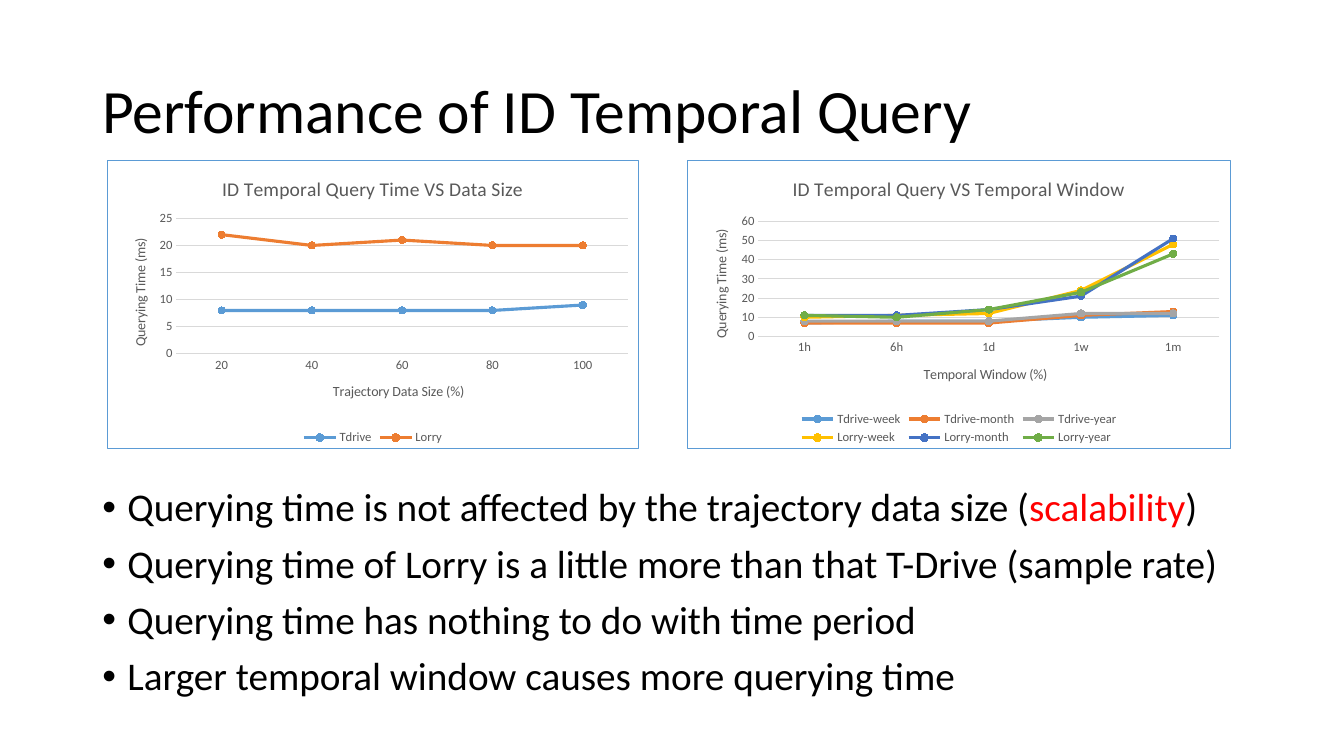
from dataclasses import dataclass

from lxml import etree
from pptx import Presentation
from pptx.chart.data import CategoryChartData
from pptx.dml.color import RGBColor
from pptx.enum.chart import XL_CHART_TYPE, XL_LEGEND_POSITION, XL_MARKER_STYLE, XL_TICK_MARK
from pptx.enum.text import MSO_ANCHOR
from pptx.oxml import parse_xml
from pptx.oxml.ns import nsdecls, qn
from pptx.util import Pt

LINE, STACKED = XL_CHART_TYPE.LINE_MARKERS, XL_CHART_TYPE.LINE_MARKERS_STACKED
BOTTOM, CIRCLE = XL_LEGEND_POSITION.BOTTOM, XL_MARKER_STYLE.CIRCLE
NO_TICK, MIDDLE = XL_TICK_MARK.NONE, MSO_ANCHOR.MIDDLE


@dataclass(frozen=True)
class Theme:
    """Colours, font and type sizes of the slide."""
    font: str = "Calibri"
    ink: str = "000000"
    accent: str = "FF0000"
    muted: str = "595959"
    grid: str = "D9D9D9"
    border: str = "5B9BD5"
    series: tuple = ("5B9BD5", "ED7D31", "A5A5A5", "FFC000", "4472C4", "70AD47")
    heading: float = 44
    body: float = 28
    chart_title: float = 14
    axis_title: float = 10
    label: float = 9


THEME = Theme()

HEADING = "Performance of ID Temporal Query"
FINDINGS = [
    [("Querying time is not affected by the trajectory data size (", THEME.ink),
     ("scalability", THEME.accent), (")", THEME.ink)],
    [("Querying time of Lorry is a little more than that T-Drive (sample rate)", THEME.ink)],
    [("Querying time has nothing to do with time period", THEME.ink)],
    [("Larger temporal window causes more querying time", THEME.ink)],
]
DATA_SIZE = {
    "kind": STACKED,
    "title": "ID Temporal Query Time VS Data Size",
    "categories": ["20", "40", "60", "80", "100"],
    "series": {"Tdrive": [8, 8, 8, 8, 9], "Lorry": [14, 12, 13, 12, 11]},
    "category_title": ("Trajectory Data Size (%)", (0.42, 0.76)),
    "value_title": ("Querying Time (ms)", (0.04, 0.26)),
    "scale": {"minimum_scale": 0, "maximum_scale": 25, "major_unit": 5},
    "plot": (0.13, 0.2, 0.85, 0.47),
}
TEMPORAL_WINDOW = {
    "kind": LINE,
    "title": "ID Temporal Query VS Temporal Window",
    "categories": ["1h", "6h", "1d", "1w", "1m"],
    "series": {
        "Tdrive-week": [7, 8, 8, 10, 11],
        "Tdrive-month": [7, 7, 7, 11, 13],
        "Tdrive-year": [8, 8, 8, 12, 12],
        "Lorry-week": [10, 11, 12, 24, 48],
        "Lorry-month": [11, 11, 14, 21, 51],
        "Lorry-year": [11, 10, 14, 23, 43],
    },
    "category_title": ("Temporal Window (%)", (0.43, 0.7)),
    "value_title": ("Querying Time (ms)", (0.04, 0.23)),
    "scale": {"minimum_scale": 0, "maximum_scale": 60, "major_unit": 10},
    "plot": (0.13, 0.21, 0.85, 0.4),
}


def apply(target, values):
    """Set each named attribute of the target."""
    for name, value in values.items():
        setattr(target, name, value)


def set_font(font, size, color):
    """Give a font the theme face, a size and a colour."""
    apply(font, {"name": THEME.font, "size": Pt(size), "bold": False})
    font.color.rgb = RGBColor.from_string(color)


def set_line(line, color, width):
    """Give a line a solid colour and a width."""
    line.color.rgb = RGBColor.from_string(color)
    line.width = Pt(width)


def set_layout(parent, index, fractions, inner=False):
    """Fix a chart part at fractions of the chart's size."""
    for old in parent.findall(qn("c:layout")):
        parent.remove(old)
    layout = etree.Element(qn("c:layout"))
    manual = etree.SubElement(layout, qn("c:manualLayout"))
    entries = [("layoutTarget", "inner")] if inner else []
    entries += [("xMode", "edge"), ("yMode", "edge")]
    entries += zip(("x", "y", "w", "h"), fractions)
    for tag, value in entries:
        etree.SubElement(manual, qn(f"c:{tag}")).set("val", str(value))
    parent.insert(index, layout)


def add_text(slide, box):
    """Add a wrapping text area and return its frame."""
    frame = slide.shapes.add_textbox(*map(Pt, box)).text_frame
    frame.word_wrap = True
    return frame


def add_runs(paragraph, runs, size):
    """Fill a paragraph with coloured runs."""
    paragraph.line_spacing = 0.9
    for text, color in runs:
        run = paragraph.add_run()
        run.text = text
        set_font(run.font, size, color)


def add_heading(slide, box):
    """Place the slide heading in its box."""
    frame = add_text(slide, box)
    frame.vertical_anchor = MIDDLE
    add_runs(frame.paragraphs[0], [(HEADING, THEME.ink)], THEME.heading)


def add_findings(slide, box):
    """Place the bulleted findings in their box."""
    frame = add_text(slide, box)
    for number, runs in enumerate(FINDINGS):
        finding = frame.add_paragraph() if number else frame.paragraphs[0]
        add_runs(finding, runs, THEME.body)
        finding.space_before = Pt(10)
        properties = finding._p.get_or_add_pPr()
        properties.set("marL", str(Pt(18)))
        properties.set("indent", str(-Pt(18)))
        properties.append(parse_xml(f'<a:buFont {nsdecls("a")} typeface="Arial"/>'))
        properties.append(parse_xml(f'<a:buChar {nsdecls("a")} char="•"/>'))


def write_title(title, text, size):
    """Write a chart or axis title."""
    title.text_frame.text = text
    set_font(title.text_frame.paragraphs[0].runs[0].font, size, THEME.muted)


def format_axis(axis, title, gridlines):
    """Format an axis with its labels, title and gridlines."""
    apply(axis, {"major_tick_mark": NO_TICK, "minor_tick_mark": NO_TICK,
                 "has_major_gridlines": gridlines, "has_title": True})
    set_font(axis.tick_labels.font, THEME.label, THEME.muted)
    text, position = title
    write_title(axis.axis_title, text, THEME.axis_title)
    set_layout(axis.axis_title._element, 1, position)
    if gridlines:
        set_line(axis.major_gridlines.format.line, THEME.grid, 0.75)
        axis.format.line.fill.background()
    else:
        set_line(axis.format.line, THEME.grid, 0.75)


def add_border(chart):
    """Frame the chart area with a thin line on white."""
    area = chart.element.find(qn("c:chart"))
    area.addnext(parse_xml(
        f'<c:spPr {nsdecls("c", "a")}><a:solidFill><a:srgbClr val="FFFFFF"/></a:solidFill>'
        f'<a:ln w="{Pt(0.75)}"><a:solidFill><a:srgbClr val="{THEME.border}"/>'
        '</a:solidFill></a:ln></c:spPr>'))


def add_line_chart(slide, box, content):
    """Place a query-time line chart in its box."""
    data = CategoryChartData()
    data.categories = content["categories"]
    for name, values in content["series"].items():
        data.add_series(name, values)
    chart = slide.shapes.add_chart(content["kind"], *map(Pt, box), data).chart
    set_font(chart.font, THEME.axis_title, THEME.ink)
    apply(chart, {"has_title": True, "has_legend": True})
    write_title(chart.chart_title, content["title"], THEME.chart_title)
    apply(chart.legend, {"position": BOTTOM, "include_in_layout": False})
    set_font(chart.legend.font, THEME.label, THEME.muted)
    format_axis(chart.category_axis, content["category_title"], False)
    format_axis(chart.value_axis, content["value_title"], True)
    apply(chart.value_axis, content["scale"])
    chart.plots[0].vary_by_categories = False
    for series, color in zip(chart.plots[0].series, THEME.series):
        series.smooth = False
        set_line(series.format.line, color, 2.25)
        apply(series.marker, {"style": CIRCLE, "size": 5})
        series.marker.format.fill.solid()
        series.marker.format.fill.fore_color.rgb = RGBColor.from_string(color)
        set_line(series.marker.format.line, color, 0.75)
    set_layout(chart.element.find(f'.//{qn("c:plotArea")}'), 0, content["plot"], True)
    add_border(chart)


def main():
    """Build and save the slide."""
    deck = Presentation()
    apply(deck, {"slide_width": Pt(960), "slide_height": Pt(540)})
    slide = deck.slides.add_slide(deck.slide_layouts[6])
    add_heading(slide, (66, 28.8, 828, 104.4))
    add_findings(slide, (66, 344.9, 828, 159.8))
    add_line_chart(slide, (76.3, 114.5, 380.2, 206.6), DATA_SIZE)
    add_line_chart(slide, (491, 114.5, 388.1, 206.6), TEMPORAL_WINDOW)
    deck.save("out.pptx")


if __name__ == "__main__":
    main()
